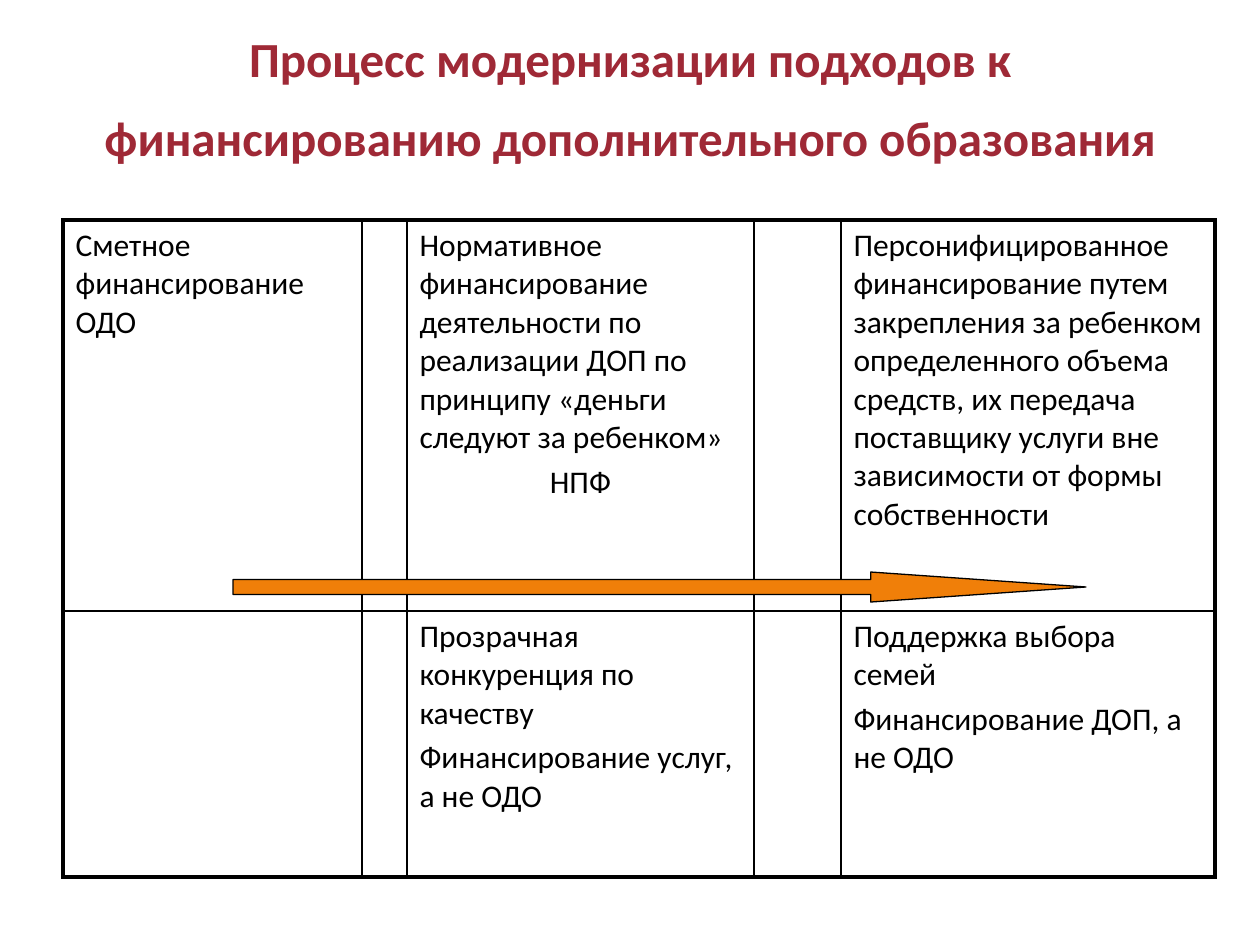
import lxml.etree
import pptx
import pptx.dml.color
import pptx.enum.shapes
import pptx.enum.text
import pptx.oxml.ns
import pptx.util

SCALE = 914400 / 126
FONT = "Calibri"
HUES = {"title": "9F2936", "text": "000000", "line": "000000", "arrow": "F07F09"}
ALIGN = pptx.enum.text.PP_ALIGN
TITLE = "Процесс модернизации подходов к финансированию дополнительного образования"
COLS = [299, 45, 347, 87, 374]
ROWS = [391, 266]
CELLS = {
    (0, 0): ["Сметное финансирование ОДО"],
    (0, 2): ["Нормативное финансирование деятельности по реализации ДОП по "
             "принципу «деньги следуют за ребенком»", "НПФ"],
    (0, 4): ["Персонифицированное финансирование путем закрепления за ребенком "
             "определенного объема средств, их передача поставщику услуги вне "
             "зависимости от формы собственности"],
    (1, 2): ["Прозрачная конкуренция по качеству", "Финансирование услуг, а не ОДО"],
    (1, 4): ["Поддержка выбора семей", "Финансирование ДОП, а не ОДО"],
}
CENTRED = {"НПФ"}


def emu(px):
    """Turn px into EMU."""
    return pptx.util.Emu(round(px * SCALE))


def tint(name):
    """Return the named colour."""
    return pptx.dml.color.RGBColor.from_string(HUES[name])


def style(para, size, hue, bold=False):
    """Format every run of a paragraph."""
    for run in para.runs:
        run.font.name = FONT
        run.font.size = pptx.util.Pt(size)
        run.font.bold = bold
        run.font.color.rgb = tint(hue)


def edge(cell, side, width):
    """Draw one border of a cell."""
    qn = pptx.oxml.ns.qn
    line = lxml.etree.SubElement(cell._tc.get_or_add_tcPr(), qn("a:ln" + side),
                                 w=str(pptx.util.Pt(width)))
    fill = lxml.etree.SubElement(line, qn("a:solidFill"))
    lxml.etree.SubElement(fill, qn("a:srgbClr"), val=HUES["line"])


def head(slide, left, top, width, height):
    """Place the title in its box."""
    shape = slide.shapes.title
    shape.left, shape.top, shape.width, shape.height = map(emu, (left, top, width, height))
    frame = shape.text_frame
    frame.text = TITLE
    frame.word_wrap = True
    frame.auto_size = pptx.enum.text.MSO_AUTO_SIZE.NONE
    frame.vertical_anchor = pptx.enum.text.MSO_ANCHOR.MIDDLE
    frame.margin_bottom = emu(24)
    para = frame.paragraphs[0]
    para.alignment = ALIGN.CENTER
    para.line_spacing = pptx.util.Pt(45)
    style(para, 28, "title", True)


def fill(cell, lines):
    """Write the paragraphs of a cell."""
    frame = cell.text_frame
    frame.text = "\n".join(lines)
    for para in frame.paragraphs:
        para.alignment = ALIGN.CENTER if para.text in CENTRED else ALIGN.LEFT
        para.space_before = pptx.util.Pt(3.6)
        style(para, 18, "text")


def grid(slide, left, top):
    """Place the table with a thick frame and thin inner lines."""
    table = slide.shapes.add_table(len(ROWS), len(COLS), emu(left), emu(top),
                                   emu(sum(COLS)), emu(sum(ROWS))).table
    table.first_row = table.horz_banding = False
    for col, width in zip(table.columns, COLS):
        col.width = emu(width)
    for r, height in enumerate(ROWS):
        table.rows[r].height = emu(height)
        for c in range(len(COLS)):
            cell = table.cell(r, c)
            outer = {"L": c == 0, "R": c == len(COLS) - 1,
                     "T": r == 0, "B": r == len(ROWS) - 1}
            for side, thick in outer.items():
                edge(cell, side, 2.25 if thick else 1)
            cell.fill.background()
            if (r, c) in CELLS:
                fill(cell, CELLS[r, c])


def arrow(slide, left, top, width, height):
    """Place the arrow that shows the course of change."""
    shape = slide.shapes.add_shape(pptx.enum.shapes.MSO_SHAPE.RIGHT_ARROW,
                                   *map(emu, (left, top, width, height)))
    shape.shadow.inherit = False
    shape.adjustments[1] = 7.17
    shape.fill.solid()
    shape.fill.fore_color.rgb = tint("arrow")
    shape.line.color.rgb = tint("line")
    shape.line.width = pptx.util.Pt(0.75)


def main():
    """Build and save the slide."""
    deck = pptx.Presentation()
    deck.slide_width, deck.slide_height = emu(1260), emu(945)
    slide = deck.slides.add_slide(deck.slide_layouts[5])
    head(slide, 63, 38, 1134, 117)
    grid(slide, 63, 220)
    arrow(slide, 233, 572, 853, 30)
    deck.save("out.pptx")


if __name__ == "__main__":
    main()
